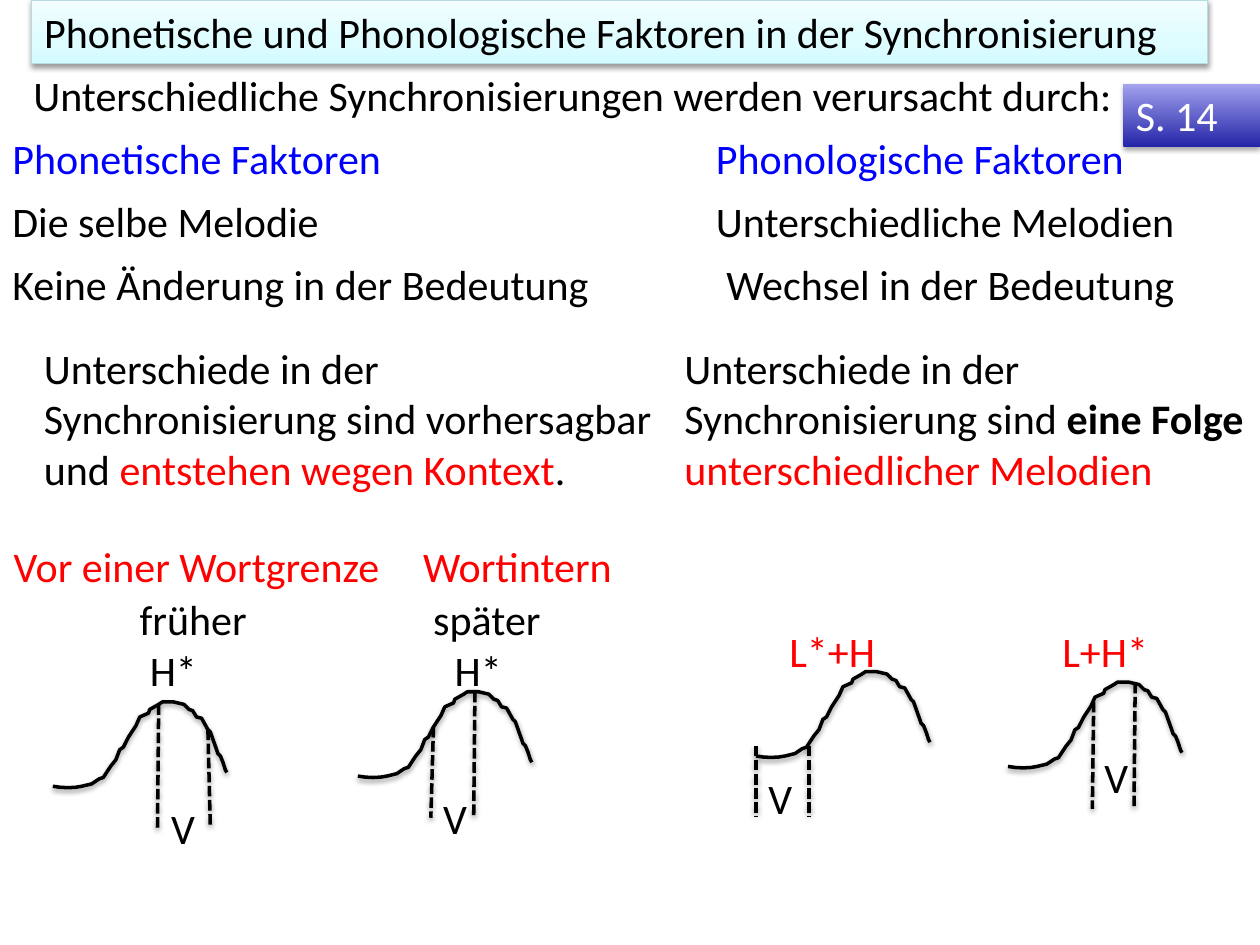
from lxml.etree import SubElement
from pptx import Presentation
from pptx.dml.color import RGBColor
from pptx.enum.dml import MSO_LINE
from pptx.enum.shapes import MSO_CONNECTOR, MSO_SHAPE
from pptx.enum.text import MSO_ANCHOR, MSO_AUTO_SIZE, PP_ALIGN
from pptx.oxml.ns import qn
from pptx.util import Pt

COLOURS = {
    "black": "000000", "white": "FFFFFF", "blue": "0000FF", "red": "FF0000",
    "title_edge": "B6DCDF", "title_low": "D3FBFF", "title_mid": "DFFCFF",
    "title_high": "F2FEFF", "badge_low": "2424A8", "badge_high": "A4A4EF",
}
FONT = {"name": "Calibri", "size": Pt(24), "bold": False}
FRAME = {
    "word_wrap": True, "auto_size": MSO_AUTO_SIZE.NONE, "vertical_anchor": MSO_ANCHOR.TOP,
    "margin_left": Pt(7.2), "margin_right": Pt(7.2),
    "margin_top": Pt(3.6), "margin_bottom": Pt(3.6),
}
ROW_HEIGHT = 36.5
BLOCK_HEIGHT = 94.3
CONTOUR = [
    (0, 0), (4.3, 0.6), (8.6, 0.8), (13, 0.6), (16.6, 0), (22.3, -1.4),
    (24.5, -2.9), (26.6, -4.3), (28.8, -5), (31.7, -9.4), (33.1, -11.5),
    (36, -15.1), (37.4, -18.7), (38.2, -20.9), (40.3, -22.3), (43.2, -28.1),
    (47.5, -34.6), (49.7, -39.6), (54.7, -41.8), (55.4, -43.9), (60.5, -46.8),
    (62.6, -48.2), (69, -48.2), (74.9, -46.8), (77.8, -43.9), (79.9, -43.2),
    (82.1, -39.6), (85, -38.9), (88.6, -32.4), (90, -31), (93.6, -20.9),
    (94.3, -18.7), (95.8, -17.3), (97.2, -13.7), (97.9, -11.5), (98.6, -9.4),
    (99.4, -7.9),
]
LABELS = [
    (12, 36, 648, "Unterschiedliche Synchronisierungen werden verursacht durch:", "black"),
    (0, 72, 240, "Phonetische Faktoren", "blue"),
    (402, 72, 300, "Phonologische Faktoren", "blue"),
    (0, 108, 204, "Die selbe Melodie", "black"),
    (402, 108, 312, "Unterschiedliche Melodien", "black"),
    (0, 144, 348, "Keine Änderung in der Bedeutung", "black"),
    (408, 144, 300, "Wechsel in der Bedeutung", "black"),
    (0.7, 305.3, 234, "Vor einer Wortgrenze", "red"),
    (234.7, 305.3, 138, "Wortintern", "red"),
    (72.7, 335.5, 84, "früher", "black"),
    (240.5, 335.5, 91, "später", "black"),
    (78.5, 365, 54, "H*", "black"),
    (252.7, 365, 54, "H*", "black"),
    (444, 354, 78, "L*+H", "red"),
    (600, 354, 78, "L+H*", "red"),
    (90.7, 455, 30, "V", "black"),
    (246.2, 449.3, 30, "V", "black"),
    (432, 438, 30, "V", "black"),
    (624, 426, 30, "V", "black"),
]
EXPLANATIONS = [
    (18, 378, [
        ("Unterschiede in der Synchronisierung sind vorhersagbar und ", "black", False),
        ("entstehen wegen Kontext", "red", False), (".", "black", False)]),
    (384, 336, [
        ("Unterschiede in der Synchronisierung sind ", "black", False),
        ("eine Folge ", "black", True), ("unterschiedlicher Melodien", "red", False)]),
]
PITCH_CURVES = [(30.2, 449.3), (204.5, 443.5), (432, 432), (576, 438)]
VOWEL_EDGES = [
    (90.7, 402.5, 90, 473), (118.8, 416.9, 120.2, 473),
    (247.7, 415.4, 246.2, 467.3), (271.4, 395.3, 270.7, 467.3),
    (432, 426.2, 432, 466.6), (462.2, 426.2, 462.2, 466.6),
    (625, 401, 624.2, 462.2), (648.7, 390.2, 648, 462.2),
]


def rgb(name):
    return RGBColor.from_string(COLOURS[name])


def apply_format(target, values):
    for name, value in values.items():
        setattr(target, name, value)


def write_spans(shape, spans):
    frame = shape.text_frame
    apply_format(frame, FRAME)
    para = frame.paragraphs[0]
    para.alignment = PP_ALIGN.LEFT
    for text, colour, bold in spans:
        span = para.add_run()
        span.text = text
        apply_format(span.font, {**FONT, "bold": bold})
        span.font.color.rgb = rgb(colour)


def add_text(page, left, top, width, height, spans):
    box = page.shapes.add_textbox(Pt(left), Pt(top), Pt(width), Pt(height))
    write_spans(box, spans)


def set_gradient(shape, stops):
    shape.fill.gradient()
    shape.fill.gradient_angle = 90
    stop_list = shape._element.spPr.find(".//" + qn("a:gsLst"))
    for stop in list(stop_list):
        stop_list.remove(stop)
    for position, colour in stops:
        stop = SubElement(stop_list, qn("a:gs"), pos=str(position * 1000))
        SubElement(stop, qn("a:srgbClr"), val=COLOURS[colour])


def set_shadow(shape, opacity=38, distance=1.6):
    effects = SubElement(shape._element.spPr, qn("a:effectLst"))
    shadow = SubElement(
        effects, qn("a:outerShdw"), blurRad=str(Pt(3.1)), dist=str(Pt(distance)),
        dir="5400000", rotWithShape="0")
    colour = SubElement(shadow, qn("a:srgbClr"), val=COLOURS["black"])
    SubElement(colour, qn("a:alpha"), val=str(opacity * 1000))


def set_line(shape, colour, width):
    shape.line.color.rgb = rgb(colour)
    shape.line.width = Pt(width)


def add_title(page):
    title = page.shapes.title
    apply_format(title, {"left": Pt(18), "top": Pt(0), "width": Pt(672), "height": Pt(ROW_HEIGHT)})
    set_gradient(title, [(0, "title_low"), (35, "title_mid"), (100, "title_high")])
    set_line(title, "title_edge", 0.75)
    set_shadow(title)
    write_spans(title, [
        ("Phonetische und Phonologische Faktoren in der Synchronisierung", "black", False)])


def add_badge(page):
    badge = page.shapes.add_shape(MSO_SHAPE.RECTANGLE, Pt(642), Pt(47.8), Pt(78), Pt(36))
    set_gradient(badge, [(0, "badge_low"), (100, "badge_high")])
    badge.line.fill.background()
    set_shadow(badge, 35, 1.8)
    write_spans(badge, [("S. 14", "white", False)])


def add_pitch_curve(page, left, base):
    points = [((left + x) * 10, (base + y) * 10) for x, y in CONTOUR]
    builder = page.shapes.build_freeform(*points[0], scale=Pt(0.1))
    builder.add_line_segments(points[1:], close=False)
    curve = builder.convert_to_shape()
    curve.fill.background()
    set_line(curve, "black", 2)
    set_shadow(curve)


def add_vowel_edge(page, ends):
    edge = page.shapes.add_connector(MSO_CONNECTOR.STRAIGHT, *[Pt(value) for value in ends])
    set_line(edge, "black", 2)
    edge.line.dash_style = MSO_LINE.SQUARE_DOT
    set_shadow(edge)


def main():
    deck = Presentation()
    apply_format(deck, {"slide_width": Pt(720), "slide_height": Pt(540)})
    page = deck.slides.add_slide(deck.slide_layouts[5])
    add_title(page)
    for left, base in PITCH_CURVES:
        add_pitch_curve(page, left, base)
    for ends in VOWEL_EDGES:
        add_vowel_edge(page, ends)
    for left, top, width, text, colour in LABELS:
        add_text(page, left, top, width, ROW_HEIGHT, [(text, colour, False)])
    for left, width, spans in EXPLANATIONS:
        add_text(page, left, 192, width, BLOCK_HEIGHT, spans)
    add_badge(page)
    deck.save("out.pptx")


if __name__ == "__main__":
    main()
